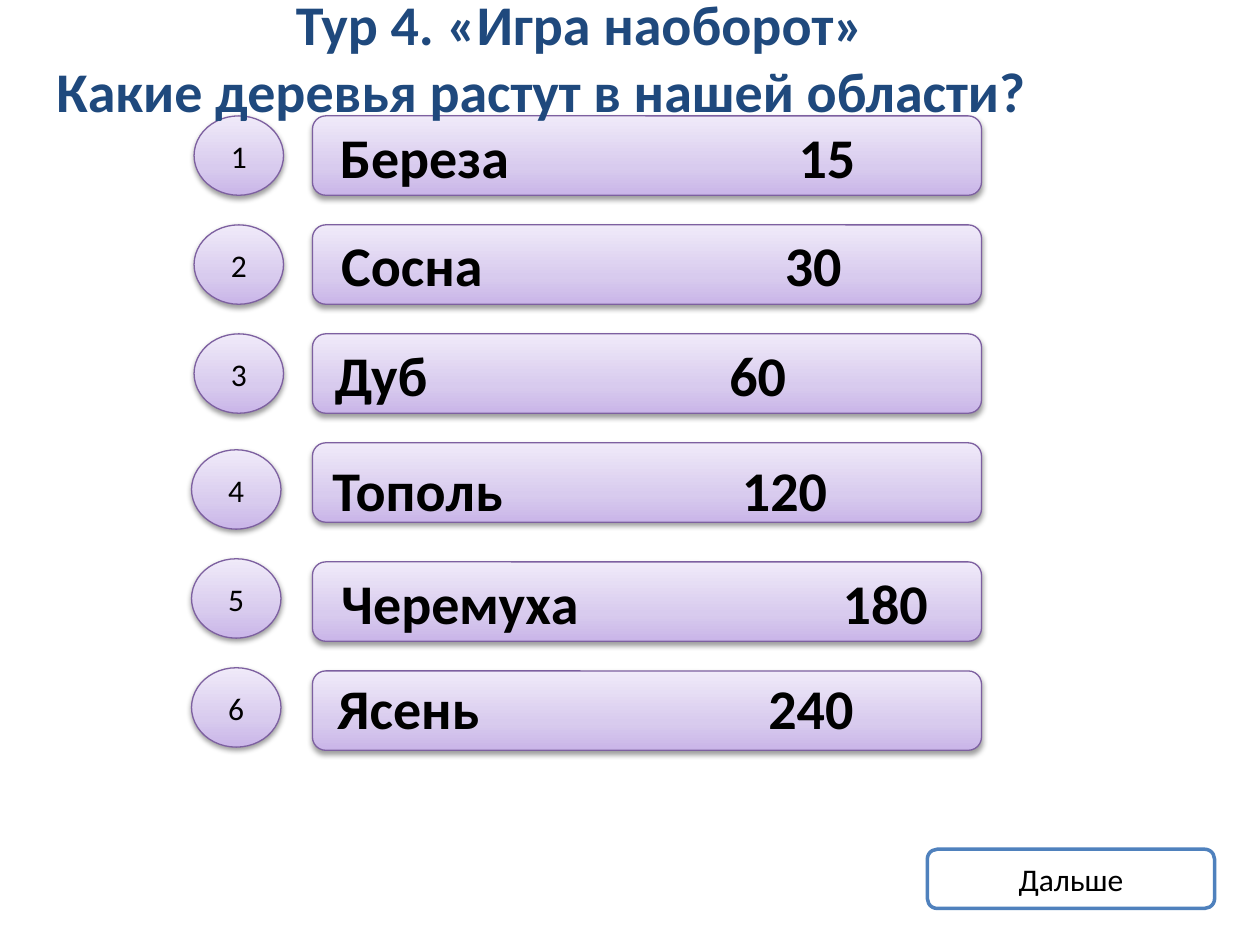
import dataclasses

import lxml.etree
import pptx
import pptx.dml.color
import pptx.enum.shapes
import pptx.enum.text
import pptx.oxml.ns
import pptx.util

Inches = pptx.util.Inches
Pt = pptx.util.Pt
qn = pptx.oxml.ns.qn
SHAPE = pptx.enum.shapes.MSO_SHAPE
ALIGN = pptx.enum.text.PP_ALIGN
ANCHOR = pptx.enum.text.MSO_ANCHOR


@dataclasses.dataclass(frozen=True)
class Theme:
    font: str = "Calibri"
    large: int = 32
    small: int = 18
    text: str = "000000"
    title: str = "1F497D"
    white: str = "FFFFFF"
    button_line: str = "4F81BD"
    card_line: str = "7D60A0"
    card_stops: tuple = ((0, "C9B5E8"), (35, "D8CBEE"), (100, "F0EAF9"))


def rgb(value):
    return pptx.dml.color.RGBColor.from_string(value)


def child(parent, tag, **attrs):
    values = {k: str(v) for k, v in attrs.items()}
    return lxml.etree.SubElement(parent, qn(tag), values)


class SlideBuilder:
    def __init__(self, slide, theme):
        self.s = slide
        self.theme = theme

    def add_text(self, p, text, size, color, bold=False):
        r = p.add_run()
        r.text = text
        r.font.name = self.theme.font
        r.font.size = Pt(size)
        r.font.bold = bold
        r.font.color.rgb = rgb(color)

    def shape(self, kind, x, y, w, h, line, weight, text=None):
        sp = self.s.shapes.add_shape(kind, Inches(x), Inches(y), Inches(w), Inches(h))
        sp.shadow.inherit = False
        sp.line.color.rgb = rgb(line)
        sp.line.width = Pt(weight)
        if text:
            tf = sp.text_frame
            tf.vertical_anchor = ANCHOR.MIDDLE
            p = tf.paragraphs[0]
            p.alignment = ALIGN.CENTER
            self.add_text(p, text, self.theme.small, self.theme.text)
        return sp

    def card(self, kind, x, y, w, h, text=None):
        sp = self.shape(kind, x, y, w, h, self.theme.card_line, 0.75, text)
        sp.fill.gradient()
        sp.fill.gradient_angle = 90
        spPr = sp.element.spPr
        stops = spPr.find(".//" + qn("a:gsLst"))
        for stop in list(stops):
            stops.remove(stop)
        for position, color in self.theme.card_stops:
            child(child(stops, "a:gs", pos=position * 1000), "a:srgbClr", val=color)
        shadow = child(spPr.find(qn("a:effectLst")), "a:outerShdw", blurRad=Pt(3.1),
                       dist=Pt(1.6), dir=5400000, rotWithShape=0)
        child(child(shadow, "a:srgbClr", val="000000"), "a:alpha", val=38000)

    def button(self, x, y, w, h, text):
        sp = self.shape(SHAPE.ROUNDED_RECTANGLE, x, y, w, h, self.theme.button_line, 2, text)
        sp.fill.solid()
        sp.fill.fore_color.rgb = rgb(self.theme.white)

    def text_frame(self, x, y, w, h):
        tf = self.s.shapes.add_textbox(Inches(x), Inches(y), Inches(w), Inches(h)).text_frame
        tf.word_wrap = True
        return tf

    def answer(self, x, y, w, name, score, score_x):
        tf = self.text_frame(x, y, w, 0.64)
        p = tf.paragraphs[0]
        tabs = child(p._p.get_or_add_pPr(), "a:tabLst")
        child(tabs, "a:tab", pos=Inches(score_x - x) - tf.margin_left, algn="l")
        self.add_text(p, f"{name}\t{score}", self.theme.large, self.theme.text, True)

    def title(self, x, y, w, h, lines):
        tf = self.text_frame(x, y, w, h)
        tf.vertical_anchor = ANCHOR.MIDDLE
        for i, (text, indent) in enumerate(lines):
            p = tf.add_paragraph() if i else tf.paragraphs[0]
            p._p.get_or_add_pPr().set("indent", str(Inches(indent)))
            self.add_text(p, text, self.theme.large, self.theme.title, True)


def main():
    prs = pptx.Presentation()
    prs.slide_width, prs.slide_height = Inches(10), Inches(7.5)
    slide = SlideBuilder(prs.slides.add_slide(prs.slide_layouts[6]), Theme())

    pitch = 0.865
    bar_tops = [0.92 + pitch * i for i in range(4)] + [4.46 + pitch * i for i in range(2)]
    badges = [(1.54, 0.92 + pitch * i) for i in range(3)]
    badges += [(1.52, 3.57 + pitch * i) for i in range(3)]
    answers = [
        (2.60, 0.92, 4.76, "Береза", 15, 6.34),
        (2.61, 1.78, 4.75, "Сосна", 30, 6.23),
        (2.56, 2.65, 5.24, "Дуб", 60, 5.79),
        (2.54, 3.57, 4.82, "Тополь", 120, 5.89),
        (2.61, 4.46, 5.18, "Черемуха", 180, 6.69),
        (2.58, 5.30, 4.71, "Ясень", 240, 6.1),
    ]

    for y in bar_tops:
        slide.card(SHAPE.ROUNDED_RECTANGLE, 2.48, y, 5.31, 0.63)
    for number, (x, y) in enumerate(badges, 1):
        slide.card(SHAPE.OVAL, x, y, 0.71, 0.63, str(number))
    for answer in answers:
        slide.answer(*answer)
    slide.button(7.36, 6.74, 2.28, 0.47, "Дальше")
    slide.title(0.35, -0.14, 9.06, 1.18, [
        ("Тур 4. «Игра наоборот»", 1.9),
        ("Какие деревья растут в нашей области?", 0),
    ])
    prs.save("out.pptx")


if __name__ == "__main__":
    main()
